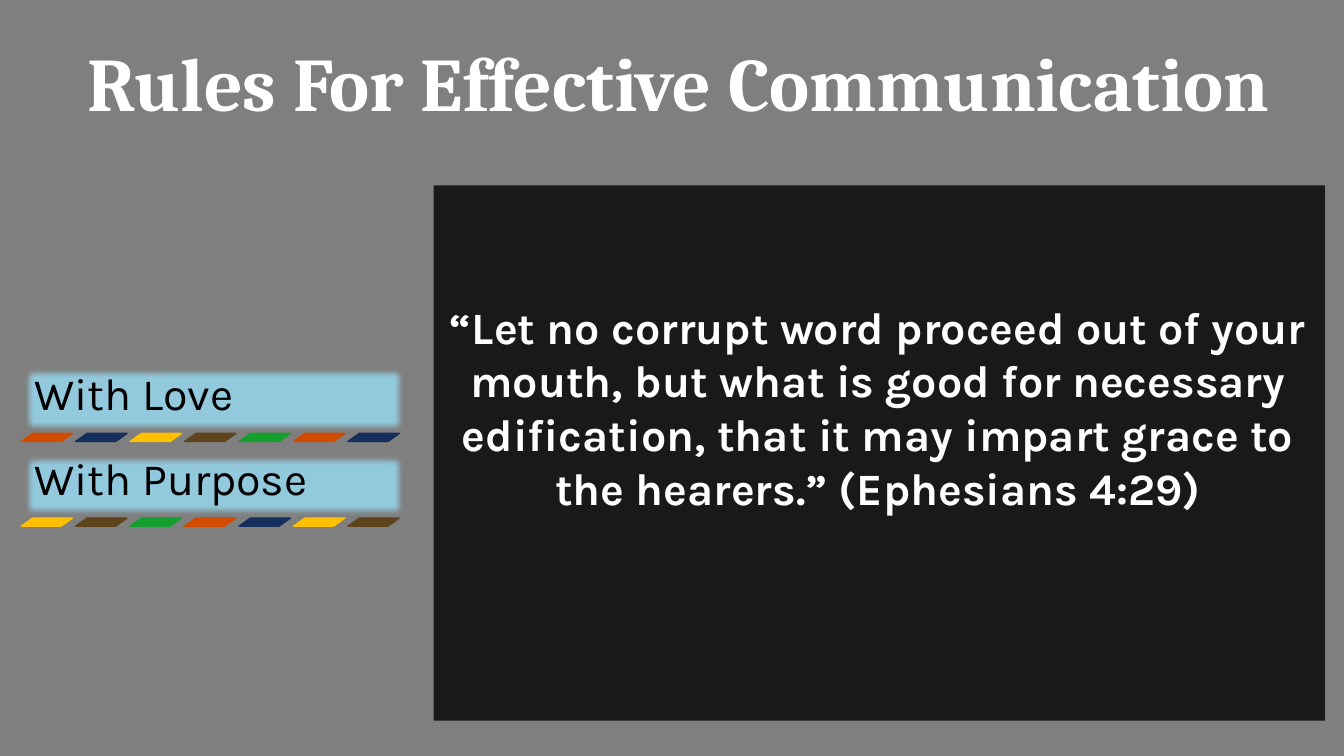
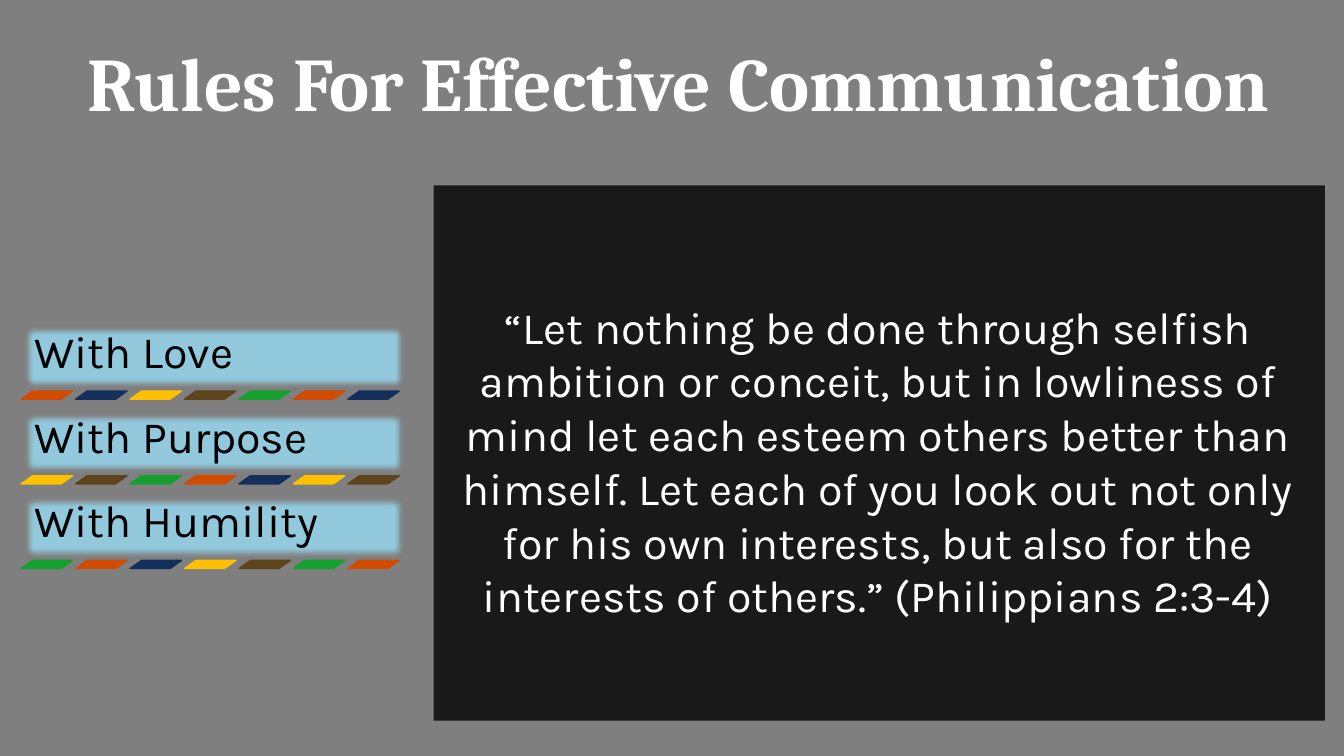
from dataclasses import dataclass

from lxml.etree import SubElement
from pptx import Presentation
from pptx.dml.color import RGBColor
from pptx.enum.shapes import MSO_SHAPE
from pptx.enum.text import MSO_ANCHOR, MSO_AUTO_SIZE, PP_ALIGN
from pptx.oxml.ns import qn
from pptx.util import Inches, Pt

SLIDE_WIDTH, SLIDE_HEIGHT = 13.33, 7.5


@dataclass(frozen=True)
class Theme:
    shade: str = "000000"
    light: str = "FFFFFF"
    dark: str = "000000"
    label: str = "99E4FF"
    dashes: tuple = ("D14C00", "142F5C", "FFC000", "5E441C", "149F2F")
    title_font: str = "Cambria"
    body_font: str = "Karla"
    title_size: int = 54
    body_size: int = 32


class Deck:
    """Holds the style, the presentation and the current slide."""

    def __init__(self, theme):
        self.theme = theme
        self.prs = Presentation()
        self.prs.slide_width = Inches(SLIDE_WIDTH)
        self.prs.slide_height = Inches(SLIDE_HEIGHT)
        self.slide = None

    def new_slide(self, title):
        self.slide = self.prs.slides.add_slide(self.prs.slide_layouts[5])
        self.backdrop()
        self.title(title)

    def shape(self, kind, left, top, width, height, color, opacity=100):
        shape = self.slide.shapes.add_shape(
            kind, Inches(left), Inches(top), Inches(width), Inches(height))
        shape.shadow.inherit = False
        shape.fill.solid()
        shape.fill.fore_color.rgb = RGBColor.from_string(color)
        shape.line.fill.background()
        if opacity < 100:
            fill_color = shape.element.spPr.find(qn("a:solidFill"))[0]
            SubElement(fill_color, qn("a:alpha"), val=str(opacity * 1000))
        return shape

    def backdrop(self):
        """Grey shade and dark verse panel, sent behind the title."""
        shade = self.shape(MSO_SHAPE.RECTANGLE, 0, 0, SLIDE_WIDTH, SLIDE_HEIGHT,
                           self.theme.shade, 50)
        panel = self.shape(MSO_SHAPE.RECTANGLE, 4.3, 1.84, 8.84, 5.31,
                           self.theme.shade, 80)
        for position, layer in enumerate((shade, panel), start=2):
            self.slide.shapes.element.insert(position, layer.element)

    def set_text(self, frame, text, font, size, color, bold=False,
                 align=PP_ALIGN.LEFT):
        frame.word_wrap = True
        frame.auto_size = MSO_AUTO_SIZE.NONE
        frame.text = text
        paragraph = frame.paragraphs[0]
        paragraph.alignment = align
        style = paragraph.runs[0].font
        style.name, style.size, style.bold = font, Pt(size), bold
        style.color.rgb = RGBColor.from_string(color)
        return paragraph

    def set_margins(self, frame, margin):
        frame.margin_left = frame.margin_right = Inches(margin)
        frame.margin_top = frame.margin_bottom = Inches(margin)

    def title(self, text):
        title = self.slide.shapes.title
        title.left, title.top = Inches(0.38), Inches(0.26)
        title.width, title.height = Inches(12.7), Inches(1.01)
        frame = title.text_frame
        frame.vertical_anchor = MSO_ANCHOR.BOTTOM
        self.set_margins(frame, 0)
        heading = self.set_text(frame, text, self.theme.title_font,
                                self.theme.title_size, self.theme.light, True,
                                PP_ALIGN.CENTER)
        heading.line_spacing = 0.9

    def text_box(self, left, top, width, height):
        return self.slide.shapes.add_textbox(
            Inches(left), Inches(top), Inches(width), Inches(height)).text_frame

    def verse(self, text, bold):
        self.set_text(self.text_box(4.35, 2.92, 8.72, 4.17), text,
                      self.theme.body_font, self.theme.body_size,
                      self.theme.light, bold, PP_ALIGN.CENTER)

    def rule_label(self, text, top, height):
        left, width = 0.21, 3.82
        glow = self.shape(MSO_SHAPE.RECTANGLE, left, top, width, height,
                          self.theme.label, 75)
        effects = glow.element.spPr.find(qn("a:effectLst"))
        SubElement(effects, qn("a:softEdge"), rad=str(Pt(5)))
        frame = self.text_box(left, top, width, height)
        frame.vertical_anchor = MSO_ANCHOR.BOTTOM
        self.set_margins(frame, 0.13)
        label = self.set_text(frame, text, self.theme.body_font,
                              self.theme.body_size, self.theme.dark)
        label.line_spacing = 0.9
        label.space_after = Pt(24)

    def dash_strip(self, top, first, count):
        """Slanted dashes; the colour cycle starts at index first."""
        colors = self.theme.dashes
        for column in range(count):
            color = colors[(first + column) % len(colors)]
            dash = self.shape(MSO_SHAPE.PARALLELOGRAM, 0.21 + 0.54 * column, top,
                              0.51, 0.08, color)
            dash.adjustments[0] = 1.41
            dash.line.color.rgb = RGBColor.from_string(color)
            dash.line.width = Pt(1)

    def rules(self, names):
        """Rows centred as a block; dash colours run on from row to row."""
        pitch, dashes_per_row = 0.84, 7
        first_strip = 5.14 - pitch / 2 * len(names)
        for row, name in enumerate(names):
            strip_top = first_strip + pitch * row
            height = 0.65 if row else 0.67
            self.rule_label(name, strip_top - height, height)
            self.dash_strip(strip_top, row * dashes_per_row, dashes_per_row)


RULES = ("With Love", "With Purpose", "With Humility")

# Number of rules shown, verse, bold verse
SLIDES = (
    (2, "“Let no corrupt word proceed out of your mouth, but what is good for "
        "necessary edification, that it may impart grace to the hearers.” "
        "(Ephesians 4:29)", True),
    (3, "“Let nothing be done through selfish ambition or conceit, but in "
        "lowliness of mind let each esteem others better than himself. Let each "
        "of you look out not only for his own interests, but also for the "
        "interests of others.” (Philippians 2:3-4)", False),
)


def main():
    deck = Deck(Theme())
    for shown, verse, bold in SLIDES:
        deck.new_slide("Rules For Effective Communication")
        deck.verse(verse, bold)
        deck.rules(RULES[:shown])
    deck.prs.save("out.pptx")


if __name__ == "__main__":
    main()
